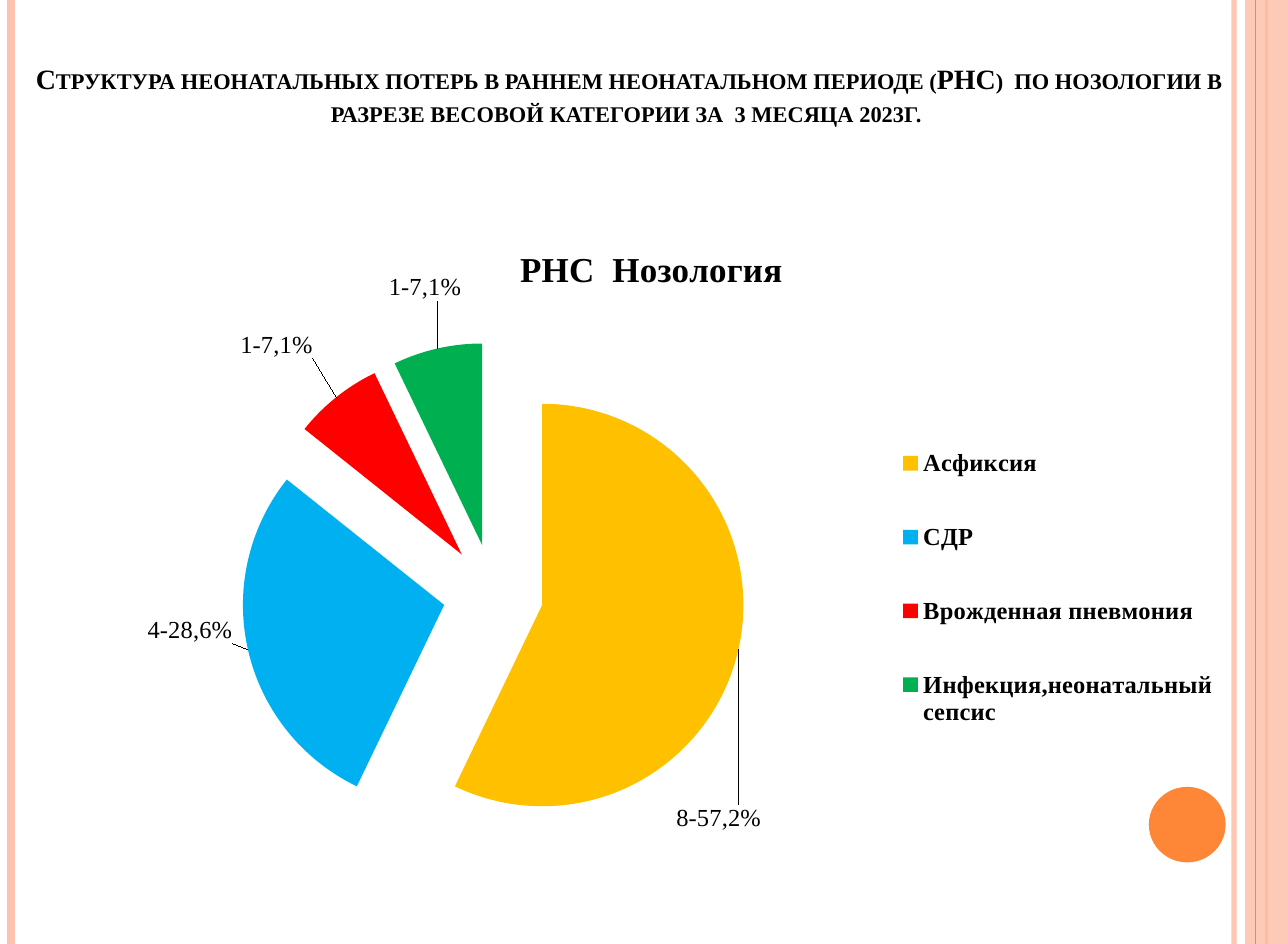
from lxml import etree
from pptx import Presentation
from pptx.chart.data import CategoryChartData
from pptx.dml.color import RGBColor
from pptx.enum.chart import XL_CHART_TYPE, XL_LABEL_POSITION, XL_LEGEND_POSITION
from pptx.enum.shapes import MSO_CONNECTOR, MSO_SHAPE
from pptx.enum.text import MSO_ANCHOR, MSO_AUTO_SIZE, PP_ALIGN
from pptx.oxml.ns import qn
from pptx.util import Cm, Pt

PIE = XL_CHART_TYPE.PIE
OUTSIDE = XL_LABEL_POSITION.OUTSIDE_END
RIGHT = XL_LEGEND_POSITION.RIGHT
STRAIGHT = MSO_CONNECTOR.STRAIGHT
RECT, OVAL = MSO_SHAPE.RECTANGLE, MSO_SHAPE.OVAL
BOTTOM, CENTER = MSO_ANCHOR.BOTTOM, PP_ALIGN.CENTER
NO_FIT = MSO_AUTO_SIZE.NONE

FONT, CHART_FONT = "Times New Roman", "TeX Gyre Schola"
COLORS = {"text": "000000", "peach": "FEC3AE", "orange": "FE8637",
          "amber": "FFC000", "blue": "00B0F0", "red": "FF0000", "green": "00B050"}

# x (% of width), colour, width in points, opacity in %
STRIPES = [(95.8, "peach", 3, 93), (0.88, "peach", 4.5, 100), (98.34, "orange", 1.5, 100)]
INNER_STRIPE = (97.46, "orange", 0.75, 100)

TITLE = ("Структура неонатальных потерь в раннем неонатальном периоде (РНС)  по нозологии "
         "в разрезе весовой категории за  3 месяца 2023г. ")
CHART_TITLE = "РНС  Нозология"
# category, value, label, colour, label shift (% of chart width and height)
DIAGNOSES = [
    ("Асфиксия ", 8, "8-57,2%", "amber", (-5.9, 22.8)),
    ("СДР", 4, "4-28,6%", "blue", (-0.7, -5.3)),
    ("Врожденная пневмония", 1, "1-7,1%", "red", (-1.6, -4.9)),
    ("Инфекция,неонатальный сепсис", 1, "1-7,1%", "green", (2.2, -6)),
]


def rgb(name):
    return RGBColor.from_string(COLORS[name])


def manual_layout(x, y, w=None, h=None, inner=False, edge=True):
    """Return a c:layout element; lengths are percentages of the chart."""
    layout = etree.Element(qn("c:layout"))
    box = etree.SubElement(layout, qn("c:manualLayout"))
    if inner:
        etree.SubElement(box, qn("c:layoutTarget"), val="inner")
    if edge:
        for tag in ("c:xMode", "c:yMode"):
            etree.SubElement(box, qn(tag), val="edge")
    for tag, share in zip("xywh", (x, y, w, h)):
        if share is not None:
            etree.SubElement(box, qn("c:" + tag), val=f"{share / 100:.3f}")
    return layout


class Deck:
    """One slide and its style; lengths are percentages of the slide."""

    def __init__(self):
        self.prs = Presentation()
        self.prs.slide_width, self.prs.slide_height = Cm(26), Cm(19.05)
        self.s = self.prs.slides.add_slide(self.prs.slide_layouts[5])

    def box(self, x, y, w, h):
        width, height = self.prs.slide_width, self.prs.slide_height
        return [round(share * side / 100)
                for share, side in zip((x, y, w, h), (width, height) * 2)]

    def font(self, font, size, bold, name=FONT):
        font.name, font.size, font.bold = name, Pt(size), bold
        font.color.rgb = rgb("text")

    def fade(self, element, opacity):
        if opacity < 100:
            color = next(element.iter(qn("a:srgbClr")))
            etree.SubElement(color, qn("a:alpha"), val=str(opacity * 1000))

    def stripe(self, x, color, width, opacity):
        left, top, _, bottom = self.box(x, 0, 0, 100)
        line = self.s.shapes.add_connector(STRAIGHT, left, top, left, bottom)
        line.line.color.rgb, line.line.width = rgb(color), Pt(width)
        self.fade(line.element, opacity)
        etree.SubElement(line.element.find(qn("p:spPr")), qn("a:effectLst"))

    def shape(self, kind, area, color, opacity=100):
        sp = self.s.shapes.add_shape(kind, *self.box(*area))
        sp.shadow.inherit = False
        sp.fill.solid()
        sp.fill.fore_color.rgb = rgb(color)
        sp.line.fill.background()
        self.fade(sp.element, opacity)

    def title(self, text, area, size):
        sp = self.s.shapes.title
        sp.left, sp.top, sp.width, sp.height = self.box(*area)
        tf = sp.text_frame
        tf.word_wrap, tf.auto_size, tf.vertical_anchor = True, NO_FIT, BOTTOM
        p = tf.paragraphs[0]
        p.alignment = CENTER
        r = p.add_run()
        r.text = text
        self.font(r.font, size, True)
        next(sp.element.iter(qn("a:rPr"))).set("cap", "small")

    def pie(self, title, rows, area):
        data = CategoryChartData()
        data.categories = [row[0] for row in rows]
        data.add_series(title, [row[1] for row in rows])
        chart = self.s.shapes.add_chart(PIE, *self.box(*area), data).chart
        self.font(chart.font, 18, False, CHART_FONT)
        chart.has_title = True
        r = chart.chart_title.text_frame.paragraphs[0].add_run()
        r.text = title
        self.font(r.font, 20, True)
        chart.has_legend = True
        chart.legend.position, chart.legend.include_in_layout = RIGHT, False
        self.font(chart.legend.font, 14, True)
        chart.plots[0].vary_by_categories = True
        self.slices(chart.plots[0].series[0], rows)
        self.arrange(chart.element, [row[4] for row in rows])

    def slices(self, series, rows):
        series.data_labels.show_value = True
        self.font(series.data_labels.font, 14, True)
        for i, (_, _, label, color, _) in enumerate(rows):
            point = series.points[i]
            point.format.fill.solid()
            point.format.fill.fore_color.rgb = rgb(color)
            point.format.line.fill.background()
            r = point.data_label.text_frame.paragraphs[0].add_run()
            r.text = label
            self.font(r.font, 14, False)
            point.data_label.position = OUTSIDE

    def arrange(self, root, shifts):
        """Place the plot, title, legend and labels; explode the slices."""
        plot = next(root.iter(qn("c:plotArea")))
        title = next(root.iter(qn("c:title")))
        legend = next(root.iter(qn("c:legend")))
        for part in (plot, title, legend):
            for old in part.findall(qn("c:layout")):
                part.remove(old)
        plot.insert(0, manual_layout(9.6, 18.2, 53.9, 75, inner=True))
        title.find(qn("c:tx")).addnext(manual_layout(38.3, 3))
        legend.find(qn("c:legendPos")).addnext(manual_layout(70.4, 27.3, 28.5, 55))
        for label, shift in zip(root.iter(qn("c:dLbl")), shifts):
            label.find(qn("c:idx")).addnext(manual_layout(*shift, edge=False))
        explosion = etree.Element(qn("c:explosion"), val="25")
        next(root.iter(qn("c:dPt"))).addprevious(explosion)
        labels = next(root.iter(qn("c:dLbls")))
        leader = labels.find(qn("c:showLeaderLines"))
        if leader is None:
            leader = etree.SubElement(labels, qn("c:showLeaderLines"))
        leader.set("val", "1")


def main():
    deck = Deck()
    for stripe in STRIPES:
        deck.stripe(*stripe)
    deck.shape(RECT, (96.68, 0, 3.32, 100), "peach", 87)
    deck.stripe(*INNER_STRIPE)
    deck.shape(OVAL, (89.2, 83.36, 5.96, 8), "orange")
    deck.title(TITLE, (0, 1.73, 97.66, 12.53), 16)
    deck.pie(CHART_TITLE, DIAGNOSES, (4.98, 23.33, 91.15, 71.07))
    deck.prs.save("out.pptx")


if __name__ == "__main__":
    main()
